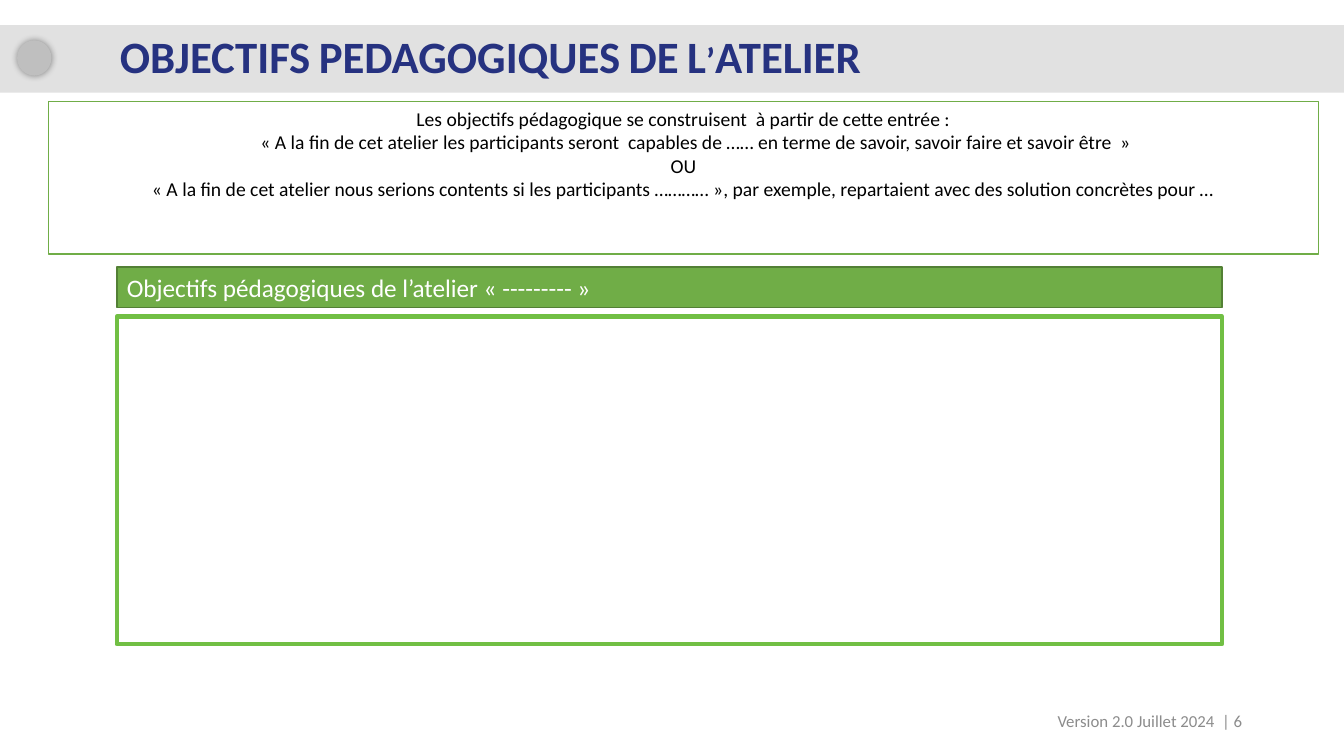
from lxml import etree
from pptx import Presentation
from pptx.dml.color import RGBColor
from pptx.enum.shapes import MSO_SHAPE
from pptx.enum.text import MSO_ANCHOR, PP_ALIGN
from pptx.oxml.ns import qn
from pptx.util import Inches, Pt

TITLE = "OBJECTIFS PEDAGOGIQUES DE L’ATELIER"
INSTRUCTIONS = [
    "Les objectifs pédagogique se construisent  à partir de cette entrée :",
    "« A la fin de cet atelier les participants seront  capables de …… en terme de savoir, savoir faire et savoir être  »",
    "OU",
    "« A la fin de cet atelier nous serions contents si les participants ………… », par exemple, repartaient avec des solution concrètes pour …",
]
HEADING = "Objectifs pédagogiques de l’atelier « --------- »"
FOOTER = "Version 2.0 Juillet 2024  | 6"


def color(value):
    return RGBColor.from_string(value)


def write(shape, lines, size=14, fill="000000", bold=False, align=PP_ALIGN.LEFT,
          anchor=MSO_ANCHOR.TOP, spacing=None):
    frame = shape.text_frame
    frame.word_wrap = True
    frame.vertical_anchor = anchor
    for index, line in enumerate(lines):
        paragraph = frame.paragraphs[0] if index == 0 else frame.add_paragraph()
        paragraph.alignment = align
        paragraph.line_spacing = spacing
        run = paragraph.add_run()
        run.text = line
        run.font.name = "Calibri"
        run.font.size = Pt(size)
        run.font.bold = bold
        run.font.color.rgb = color(fill)
    return frame


def add_box(slide, left, top, width, height, fill=None, line=None, weight=1,
            kind=MSO_SHAPE.RECTANGLE):
    shape = slide.shapes.add_shape(
        kind, Inches(left), Inches(top), Inches(width), Inches(height))
    shape.shadow.inherit = False
    if fill:
        shape.fill.solid()
        shape.fill.fore_color.rgb = color(fill)
    else:
        shape.fill.background()
    if line:
        shape.line.color.rgb = color(line)
        shape.line.width = Pt(weight)
    else:
        shape.line.fill.background()
    return shape


def add_text(slide, left, top, width, height, text, **style):
    box = slide.shapes.add_textbox(
        Inches(left), Inches(top), Inches(width), Inches(height))
    return write(box, [text], **style)


def add_glow(shape, blur, opacity):
    effects = shape._element.spPr.find(qn("a:effectLst"))
    shadow = etree.SubElement(effects, qn("a:outerShdw"), blurRad=str(Pt(blur)),
                              dist="0", dir="0", algn="ctr", rotWithShape="0")
    black = etree.SubElement(shadow, qn("a:srgbClr"), val="000000")
    etree.SubElement(black, qn("a:alpha"), val=str(opacity * 1000))


def add_header(slide, left, top, width, height):
    add_box(slide, left, top, width, height, fill="E1E1E1")
    dot = add_box(slide, left + 0.17, top + 0.15, 0.34, 0.35, fill="BFBFBF",
                  kind=MSO_SHAPE.OVAL)
    add_glow(dot, blur=5, opacity=40)
    frame = add_text(slide, left + 1.09, top + 0.05, 8.74, 0.59, TITLE, size=32,
                     fill="263280", bold=True, spacing=0.9)
    frame.paragraphs[0].runs[0].font._element.set("cap", "small")


def add_instructions(slide, left, top, width, height):
    box = add_box(slide, left, top, width, height, fill="FFFFFF", line="70AD47")
    frame = write(box, INSTRUCTIONS, align=PP_ALIGN.CENTER)
    quote = frame.paragraphs[1]._p.get_or_add_pPr()
    quote.set("marL", str(Inches(0.25)))


def add_objectives(slide, left, top, width, height):
    heading = add_box(slide, left, top, width, 0.4, fill="70AD47", line="538035")
    write(heading, [HEADING], size=18, fill="FFFFFF")
    add_box(slide, left, top + 0.49, width, height - 0.49, line="71BF44", weight=3.25)


def add_footer(slide, left, top, width, height):
    add_text(slide, left, top, width, height, FOOTER, size=12, fill="8C8C8C",
             align=PP_ALIGN.RIGHT, anchor=MSO_ANCHOR.MIDDLE)


def main():
    presentation = Presentation()
    presentation.slide_width = Inches(13.33)
    presentation.slide_height = Inches(7.5)
    slide = presentation.slides.add_slide(presentation.slide_layouts[6])
    add_header(slide, 0, 0.25, 13.33, 0.67)
    add_footer(slide, 9.42, 6.95, 3, 0.4)
    add_instructions(slide, 0.48, 1.01, 12.6, 1.51)
    add_objectives(slide, 1.16, 2.65, 10.96, 3.74)
    presentation.save("out.pptx")


if __name__ == "__main__":
    main()
